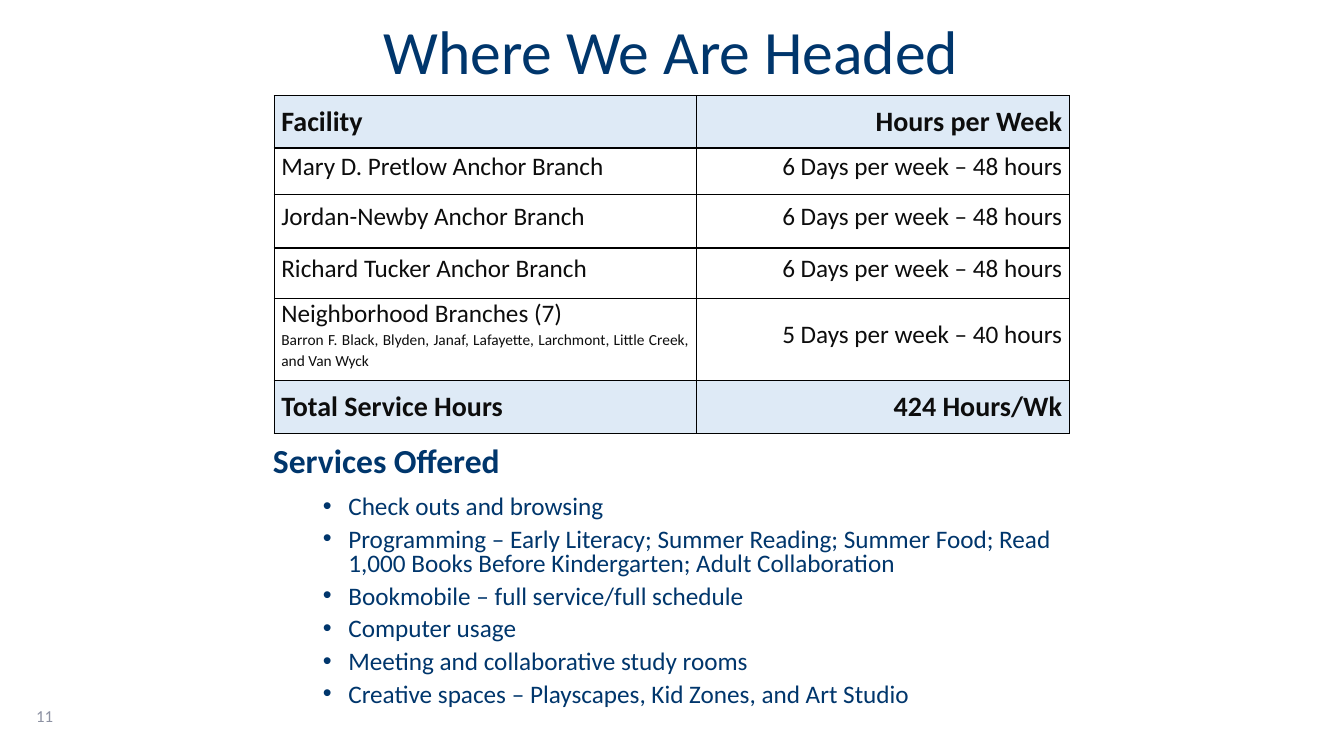
"""Build the slide on planned library hours and services."""
from lxml import etree
from pptx import Presentation
from pptx.dml.color import RGBColor
from pptx.enum import text as t
from pptx.oxml import ns
from pptx.util import Cm, Pt

NAVY = RGBColor(0x00, 0x36, 0x6C)
INK = RGBColor(0x0D, 0x0D, 0x0D)
GRAY = RGBColor(0x8C, 0x91, 0xA2)
PALE = RGBColor(0xDE, 0xEA, 0xF6)
FONT = "Calibri"

TITLE = "Where We Are Headed"
ANCHOR = "6 Days per week – 48 hours"
ROWS = [
    (1.32, ["Facility"], "Hours per Week"),
    (1.17, ["Mary D. Pretlow Anchor Branch"], ANCHOR),
    (1.35, ["Jordan-Newby Anchor Branch"], ANCHOR),
    (1.27, ["Richard Tucker Anchor Branch"], ANCHOR),
    (2.06, ["Neighborhood Branches (7)",
            "Barron F. Black, Blyden, Janaf, Lafayette, Larchmont, "
            "Little Creek, and Van Wyck"], "5 Days per week – 40 hours"),
    (1.35, ["Total Service Hours"], "424 Hours/Wk"),
]
COLS = (10.64, 9.4)
HEAD = "Services Offered"
ITEMS = [
    "Check outs and browsing",
    "Programming – Early Literacy; Summer Reading; Summer Food; "
    "Read 1,000 Books Before Kindergarten; Adult Collaboration",
    "Bookmobile – full service/full schedule",
    "Computer usage",
    "Meeting and collaborative study rooms",
    "Creative spaces – Playscapes, Kid Zones, and Art Studio",
]
PAGE = "11"


def add_run(para, words, size, color, bold=False):
    """Add one styled run."""
    run = para.add_run()
    run.text = words
    font = run.font
    font.name, font.size, font.bold = FONT, Pt(size), bold
    font.color.rgb = color


def add_box(slide, x, y, w, h):
    """Add a wrapping text box and return its frame."""
    frame = slide.shapes.add_textbox(Cm(x), Cm(y), Cm(w), Cm(h)).text_frame
    frame.word_wrap = True
    return frame


def set_edges(cell):
    """Draw a thin black line on each side of a cell."""
    props = cell._tc.get_or_add_tcPr()
    for i, side in enumerate(("lnL", "lnR", "lnT", "lnB")):
        line = etree.Element(ns.qn("a:" + side), w=str(Pt(1)))
        fill = etree.SubElement(line, ns.qn("a:solidFill"))
        etree.SubElement(fill, ns.qn("a:srgbClr"), val="000000")
        props.insert(i, line)


def fill_cell(cell, lines, align, strong):
    """Write and style one table cell."""
    cell.vertical_anchor = t.MSO_ANCHOR.MIDDLE
    cell.margin_left = cell.margin_right = Cm(0.18)
    cell.margin_top = cell.margin_bottom = 0
    if strong:
        cell.fill.solid()
        cell.fill.fore_color.rgb = PALE
    else:
        cell.fill.background()
    set_edges(cell)
    frame = cell.text_frame
    for i, words in enumerate(lines):
        para = frame.add_paragraph() if i else frame.paragraphs[0]
        para.alignment = align
        if not strong:
            para.line_spacing = Pt(15)
        size = 20 if strong else 11 if i else 18
        add_run(para, words, size, INK, strong)


def add_hours(slide):
    """Add the table of hours."""
    high = sum(row[0] for row in ROWS)
    table = slide.shapes.add_table(len(ROWS), len(COLS), Cm(6.91), Cm(2.41),
                                   Cm(sum(COLS)), Cm(high)).table
    table.first_row = table.horz_banding = False
    for col, wide in zip(table.columns, COLS):
        col.width = Cm(wide)
    for i, (tall, names, hours) in enumerate(ROWS):
        table.rows[i].height = Cm(tall)
        strong = i in (0, len(ROWS) - 1)
        left = t.PP_ALIGN.LEFT if strong else t.PP_ALIGN.JUSTIFY
        fill_cell(table.cell(i, 0), names, left, strong)
        fill_cell(table.cell(i, 1), [hours], t.PP_ALIGN.RIGHT, strong)


def add_list(slide):
    """Add the heading and bullets on services."""
    frame = add_box(slide, 6.63, 11.15, 21.49, 7.4)
    para = frame.paragraphs[0]
    para.line_spacing, para.space_after = 0.8, Pt(6)
    add_run(para, HEAD, 24, NAVY, True)
    for words in ITEMS:
        para = frame.add_paragraph()
        props = para._p.get_or_add_pPr()
        props.set("marL", str(Cm(1.9)))
        props.set("indent", str(Cm(-0.64)))
        etree.SubElement(props, ns.qn("a:buFont"), typeface="Arial")
        etree.SubElement(props, ns.qn("a:buChar"), char="•")
        para.line_spacing, para.space_before = 0.8, Pt(6)
        add_run(para, words, 18, NAVY)


def main():
    """Build and save the slide."""
    deck = Presentation()
    deck.slide_width, deck.slide_height = Cm(33.87), Cm(19.05)
    slide = deck.slides.add_slide(deck.slide_layouts[5])
    title = slide.shapes.title
    title.left, title.top = Cm(5.97), Cm(0.18)
    title.width, title.height = Cm(21.89), Cm(2.41)
    frame = title.text_frame
    frame.vertical_anchor = t.MSO_ANCHOR.MIDDLE
    para = frame.paragraphs[0]
    para.alignment, para.line_spacing = t.PP_ALIGN.CENTER, 0.9
    add_run(para, TITLE, 44, NAVY)
    add_list(slide)
    frame = add_box(slide, 0.66, 17.53, 7.62, 1.02)
    frame.vertical_anchor = t.MSO_ANCHOR.MIDDLE
    add_run(frame.paragraphs[0], PAGE, 12, GRAY)
    add_hours(slide)
    deck.save("out.pptx")


if __name__ == "__main__":
    main()
